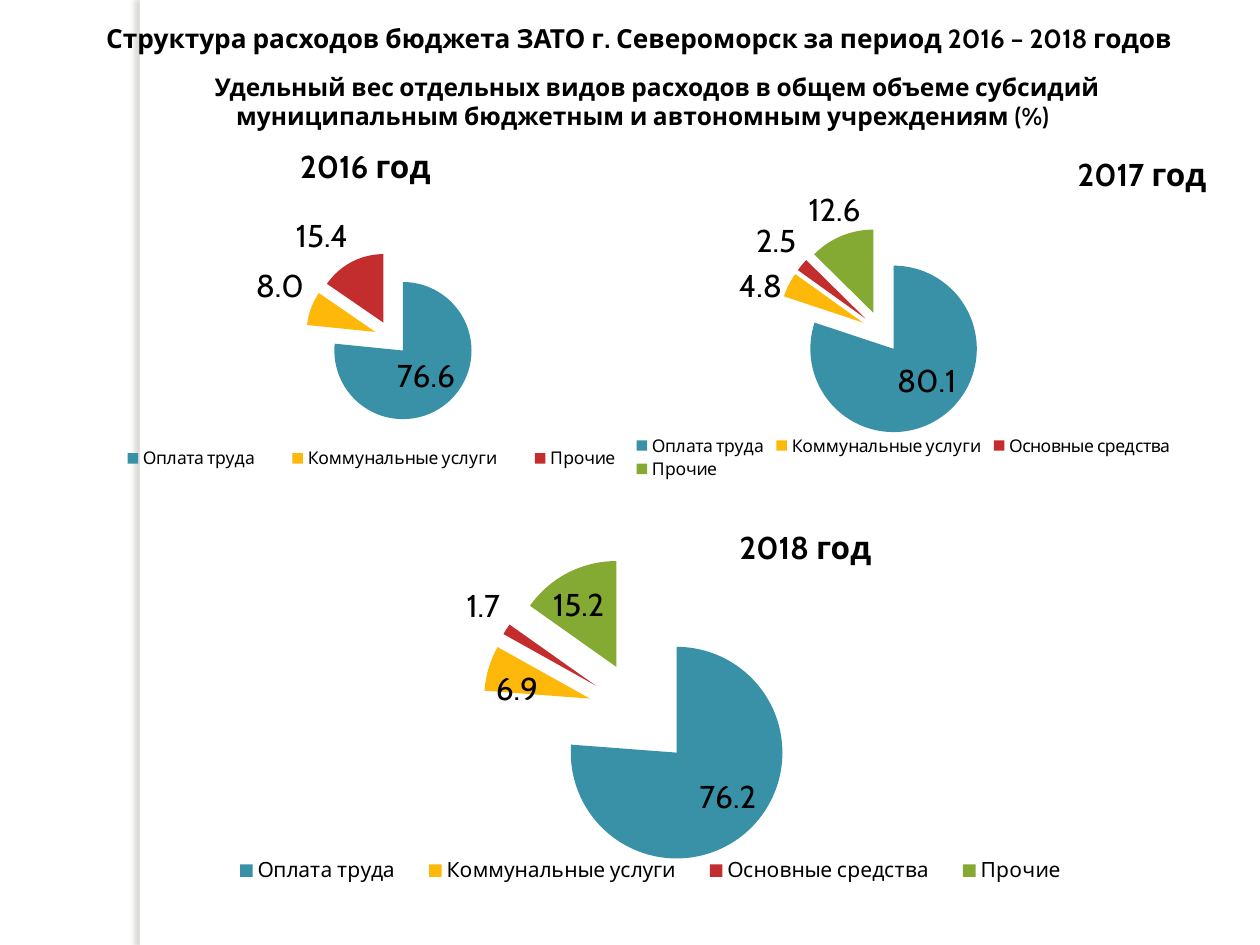
from lxml import etree
from pptx import Presentation
from pptx import util as u
from pptx.chart import data as chart_data
from pptx.dml import color
from pptx.enum import chart as chart_enum
from pptx.enum import shapes, text
from pptx.oxml import ns

Inches = u.Inches
LabelPosition = chart_enum.XL_LABEL_POSITION
FONT = "Cabin"
COLORS = {
    "black": "000000",
    "white": "FFFFFF",
    "shadow": "736F63",
    "teal": "3891A7",
    "amber": "FEB80A",
    "red": "C32D2E",
    "green": "84AA33",
}
SLICE_COLORS = ["teal", "amber", "red", "green"]
EXPENSES = ["Оплата труда", "Коммунальные услуги", "Основные средства", "Прочие"]
EXPENSES_2016 = ["Оплата труда", "Коммунальные услуги", "Прочие"]


def rgb(name):
    return color.RGBColor.from_string(COLORS[name])


def child(parent, tag, **attributes):
    element = etree.SubElement(parent, ns.qn(tag))
    for key, value in attributes.items():
        element.set(key, str(value))
    return element


def style_font(font, size, bold=False):
    font.name = FONT
    font.size = u.Pt(size)
    font.bold = bold
    font.color.rgb = rgb("black")


def add_side_strip(page):
    strip = page.shapes.add_shape(
        shapes.MSO_SHAPE.RECTANGLE, Inches(1.11), 0, Inches(0.08), Inches(7.5))
    strip.fill.solid()
    strip.fill.fore_color.rgb = rgb("white")
    strip.line.fill.background()
    strip.shadow.inherit = False
    effects = strip.element.spPr.find(ns.qn("a:effectLst"))
    shadow = child(effects, "a:outerShdw", blurRad=u.Pt(3), dist=u.Pt(3),
                   dir=180 * 60000, algn="tl", rotWithShape=0)
    tint = child(shadow, "a:srgbClr", val=COLORS["shadow"])
    child(tint, "a:alpha", val=25000)
    page.shapes._spTree.insert(2, strip.element)


def write_heading(box, bounds, content, size):
    box.left, box.top, box.width, box.height = map(Inches, bounds)
    frame = box.text_frame
    frame.word_wrap = True
    frame.auto_size = text.MSO_AUTO_SIZE.SHAPE_TO_FIT_TEXT
    frame.vertical_anchor = text.MSO_ANCHOR.TOP
    para = frame.paragraphs[0]
    para.alignment = text.PP_ALIGN.CENTER
    properties = para._p.get_or_add_pPr()
    properties.set("marL", "0")
    properties.set("indent", str(Inches(0.23)))
    span = para.add_run()
    span.text = content
    style_font(span.font, size, bold=True)


def set_layout(parent, fractions, position=0, inner=False):
    layout = parent.find(ns.qn("c:layout"))
    if layout is None:
        layout = etree.Element(ns.qn("c:layout"))
        parent.insert(position, layout)
    manual = child(layout, "c:manualLayout")
    if inner:
        child(manual, "c:layoutTarget", val="inner")
    for mode in ("xMode", "yMode"):
        child(manual, f"c:{mode}", val="edge")
    for key, value in zip("xywh", fractions):
        child(manual, f"c:{key}", val=value)


def explode(series, percent):
    explosion = etree.Element(ns.qn("c:explosion"))
    explosion.set("val", str(percent))
    series._element.find(ns.qn("c:tx")).addnext(explosion)


def add_year_pie(page, year, bounds, names, values, explosion, legend_size,
                 legend_at, title_at=None, plot=None, inside_labels=None):
    source = chart_data.CategoryChartData(number_format="0.0")
    source.categories = names
    source.add_series(year, values)
    chart = page.shapes.add_chart(
        chart_enum.XL_CHART_TYPE.PIE, *map(Inches, bounds), source).chart
    style_font(chart.font, 18)

    chart.has_title = True
    span = chart.chart_title.text_frame.paragraphs[0].add_run()
    span.text = year
    style_font(span.font, 18, bold=True)
    if title_at:
        set_layout(chart.chart_title._element, title_at)

    chart.has_legend = True
    chart.legend.position = chart_enum.XL_LEGEND_POSITION.BOTTOM
    chart.legend.include_in_layout = False
    style_font(chart.legend.font, legend_size)
    set_layout(chart.legend._element, legend_at, position=1)

    pie = chart.plots[0]
    pie.vary_by_categories = True
    series = pie.series[0]
    explode(series, explosion)
    for index, slice_color in enumerate(SLICE_COLORS[:len(names)]):
        fill = series.points[index].format.fill
        fill.solid()
        fill.fore_color.rgb = rgb(slice_color)

    labels = series.data_labels
    labels.show_value = True
    labels.number_format = "0.0"
    labels.number_format_is_linked = False
    labels.position = LabelPosition.BEST_FIT
    style_font(labels.font, 18)
    for index, position in (inside_labels or {}).items():
        label = series.points[index].data_label
        style_font(label.font, 18)
        label.position = position

    if plot:
        area = chart._chartSpace.find(f".//{ns.qn('c:plotArea')}")
        set_layout(area, plot, inner=True)


def main():
    deck = Presentation()
    deck.slide_width, deck.slide_height = Inches(10), Inches(7.5)
    page = deck.slides.add_slide(deck.slide_layouts[5])
    add_side_strip(page)
    write_heading(
        page.shapes.title, (0.43, 0.13, 9.06, 0.35),
        "Структура расходов бюджета ЗАТО г. Североморск за период 2016 – 2018 годов", 15)
    add_year_pie(page, "2018 год", (1.38, 4.06, 7.8, 3.15), EXPENSES,
                 (76.2, 6.9, 1.7, 15.2), 50, 12, (0.04, 0.86, 0.89, 0.09),
                 title_at=(0.57, 0.02), plot=(0.01, 0.11, 0.93, 0.8),
                 inside_labels={1: LabelPosition.INSIDE_END})
    subtitle = page.shapes.add_textbox(0, 0, Inches(1), Inches(1))
    write_heading(
        subtitle, (0.57, 0.52, 9.06, 0.57),
        "Удельный вес отдельных видов расходов в общем объеме субсидий "
        "муниципальным бюджетным и автономным учреждениям (%)", 14)
    add_year_pie(page, "2016 год", (0.62, 0.99, 4.56, 2.91), EXPENSES_2016,
                 (76.6, 8, 15.4), 25, 10, (0.03, 0.87, 0.96, 0.08),
                 inside_labels={0: LabelPosition.CENTER})
    add_year_pie(page, "2017 год", (4.8, 1.11, 4.88, 2.8), EXPENSES,
                 (80.1, 4.8, 2.5, 12.6), 25, 10, (0.04, 0.83, 0.89, 0.14),
                 title_at=(0.76, 0.02), plot=(0.01, 0.25, 0.88, 0.59))
    deck.save("out.pptx")


if __name__ == "__main__":
    main()
